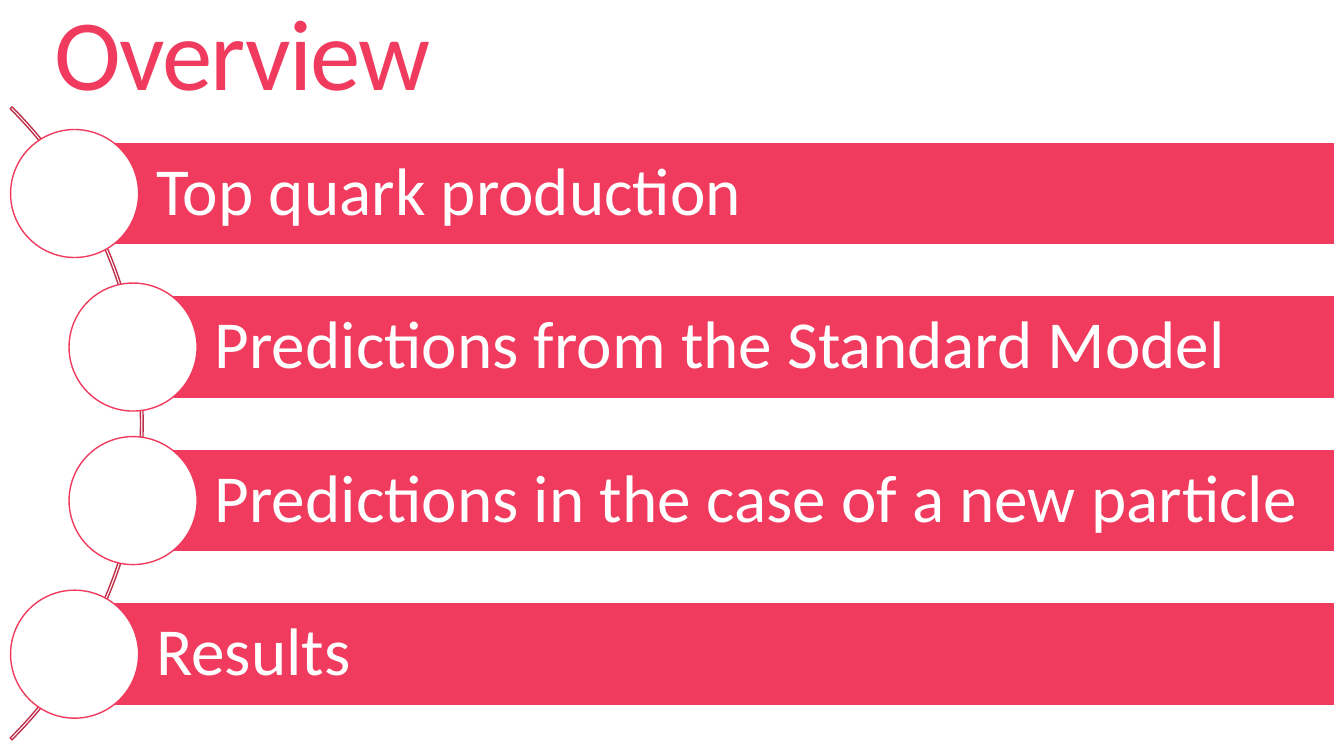
from pptx import Presentation
from pptx.dml.color import RGBColor
from pptx.enum.shapes import MSO_SHAPE
from pptx.enum.text import MSO_ANCHOR, PP_ALIGN
from pptx.util import Inches, Pt

ARC, BAR, DISC = MSO_SHAPE.BLOCK_ARC, MSO_SHAPE.RECTANGLE, MSO_SHAPE.OVAL
MIDDLE, LEFT = MSO_ANCHOR.MIDDLE, PP_ALIGN.LEFT

COLORS = {"accent": "F03B5E", "dark": "C02F4B", "white": "FFFFFF"}
FONT = "Calibri"

TOPICS = [  # text, left edge of the bar
    ("Top quark production", 0.74),
    ("Predictions from the Standard Model", 1.32),
    ("Predictions in the case of a new particle", 1.32),
    ("Results", 0.74),
]
BAR_RIGHT, BAR_HEIGHT, DISC_SIZE = 13.24, 1.02, 1.27
FIRST_CENTER, LAST_CENTER = 1.92, 6.49


class Deck:
    def __init__(self):
        self.prs = Presentation()
        self.prs.slide_width = Inches(13.33)
        self.prs.slide_height = Inches(7.5)
        self.s = self.prs.slides.add_slide(self.prs.slide_layouts[6])

    def color(self, name):
        return RGBColor.from_string(COLORS[name])

    def shape(self, kind, box, line, fill=None):
        sp = self.s.shapes.add_shape(kind, *map(Inches, box))
        sp.shadow.inherit = False
        if fill:
            sp.fill.solid()
            sp.fill.fore_color.rgb = self.color(fill)
        else:
            sp.fill.background()
        sp.line.color.rgb = self.color(line)
        sp.line.width = Pt(1)
        return sp

    def set_text(self, sp, text, size, color, spacing, insets):
        """Fill a shape or text box with one paragraph; insets run left, top, right, bottom."""
        tf = sp.text_frame
        sides = ("margin_left", "margin_top", "margin_right", "margin_bottom")
        frame = dict(zip(sides, map(Inches, insets)))
        frame.update(word_wrap=True, vertical_anchor=MIDDLE)
        for name, value in frame.items():
            setattr(tf, name, value)
        p = tf.paragraphs[0]
        p.alignment, p.line_spacing = LEFT, spacing
        r = p.add_run()
        r.text = text
        for name, value in {"name": FONT, "size": Pt(size)}.items():
            setattr(r.font, name, value)
        r.font.color.rgb = self.color(color)
        return r

    def title(self, text, box):
        sp = self.s.shapes.add_textbox(*map(Inches, box))
        r = self.set_text(sp, text, 72, "accent", 0.85, (0.1, 0.05, 0.1, 0.05))
        r._r.get_or_add_rPr().set("spc", "-120")

    def arc(self, box):
        sp = self.shape(ARC, box, "dark")
        for i, value in enumerate((189, 27, 0.003)):
            sp.adjustments[i] = value

    def topic(self, text, left, center):
        """Draw a bar with its text and a disc centred on the bar's left edge."""
        bar = self.shape(BAR, (left, center - BAR_HEIGHT / 2, BAR_RIGHT - left, BAR_HEIGHT),
                         "white", "accent")
        self.set_text(bar, text, 48, "white", 0.9, (0.81, 0.13, 0.13, 0.13))
        radius = DISC_SIZE / 2
        self.shape(DISC, (left - radius, center - radius, DISC_SIZE, DISC_SIZE),
                   "accent", "white")


def main():
    deck = Deck()
    deck.title("Overview", (0.44, 0, 11.78, 1.18))
    deck.arc((-7.46, -0.24, 8.88, 8.88))
    pitch = (LAST_CENTER - FIRST_CENTER) / (len(TOPICS) - 1)
    for i, (text, left) in enumerate(TOPICS):
        deck.topic(text, left, FIRST_CENTER + i * pitch)
    deck.prs.save("out.pptx")


if __name__ == "__main__":
    main()
